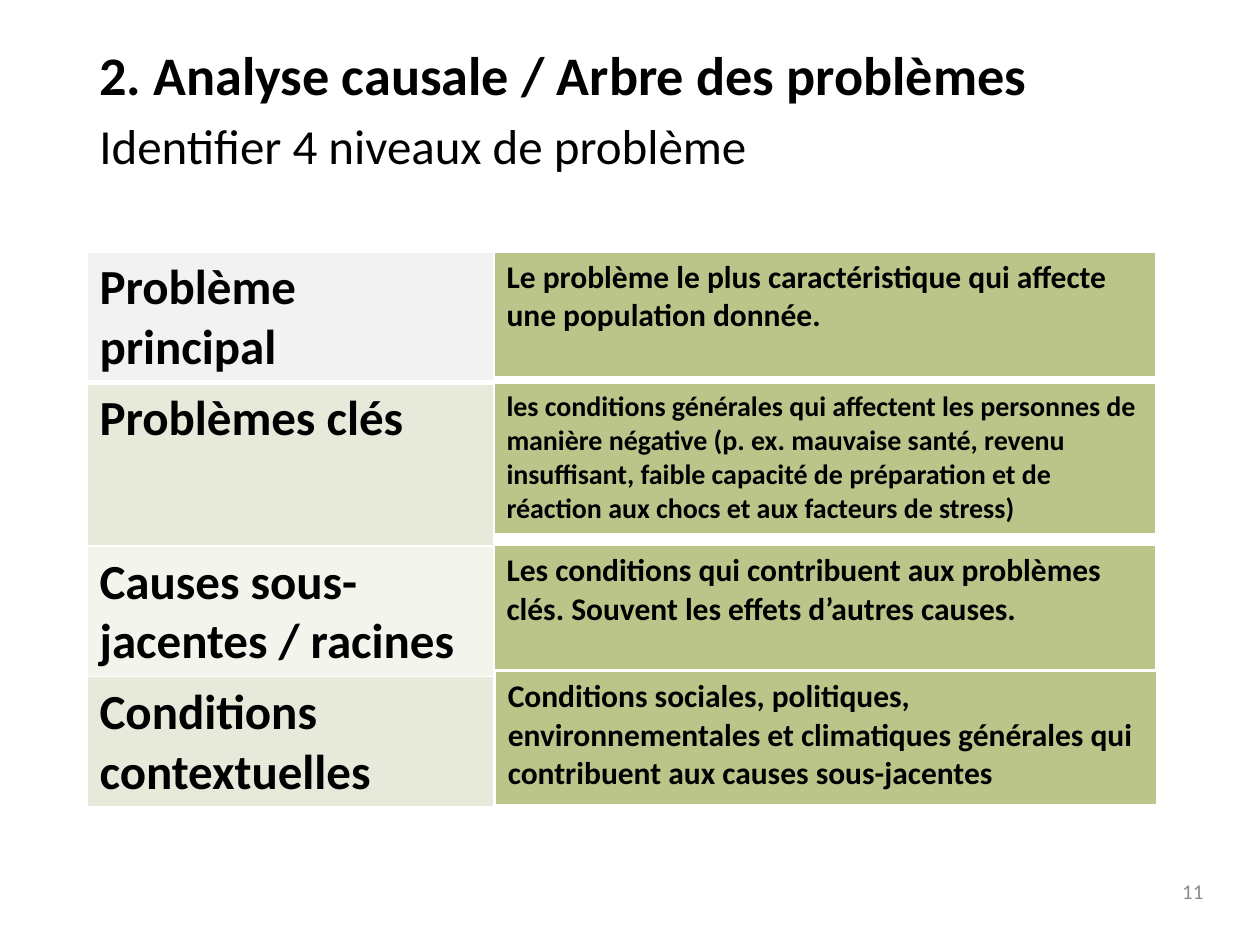
from dataclasses import dataclass

from lxml.etree import SubElement as Sub
from pptx import Presentation
from pptx.dml.color import RGBColor as Rgb
from pptx.enum.text import MSO_ANCHOR as Anchor, PP_ALIGN as Align
from pptx.oxml.ns import qn
from pptx.util import Inches, Pt

FONT = "Calibri"
COLORS = {
    "ink": "000000", "gray": "8C8C8C", "line": "FFFFFF", "green": "BCC589",
    "pale": "F2F2F2", "sage": "E7EADA", "mist": "F3F5ED",
}


@dataclass
class Row:
    text: str
    fill: str
    tall: float
    size: int
    base: int = 1  # width of the bottom border in points


@dataclass
class Grid:
    left: float
    top: float
    wide: float
    tall: float
    rows: list[Row]


@dataclass
class Label:
    text: str
    box: tuple[float, float, float, float]
    size: int
    color: str = "ink"
    bold: bool = False
    lead: float = 1.0
    anchor: Anchor = Anchor.MIDDLE
    align: Align = Align.LEFT


def style(par, size: int, color: str, bold: bool) -> None:
    font = par.font
    font.name, font.size, font.bold = FONT, Pt(size), bold
    font.color.rgb = Rgb.from_string(COLORS[color])


def add_label(slide, label: Label) -> None:
    frame = slide.shapes.add_textbox(*map(Inches, label.box)).text_frame
    frame.word_wrap = True
    frame.vertical_anchor = label.anchor
    par = frame.paragraphs[0]
    par.text = label.text
    par.alignment = label.align
    par.line_spacing = label.lead
    style(par, label.size, label.color, label.bold)


def add_edge(cell, side: str, width: int) -> None:
    props = cell._tc.get_or_add_tcPr()
    edge = Sub(props, qn(f"a:ln{side}"), w=str(Pt(width)))
    fill = Sub(edge, qn("a:solidFill"))
    Sub(fill, qn("a:srgbClr"), val=COLORS["line"])


def add_grid(slide, grid: Grid) -> None:
    box = map(Inches, (grid.left, grid.top, grid.wide, grid.tall))
    shape = slide.shapes.add_table(len(grid.rows), 1, *box)
    table = shape.table
    table.first_row = table.horz_banding = False
    for i, row in enumerate(grid.rows):
        table.rows[i].height = Inches(row.tall)
        cell = table.cell(i, 0)
        for side in "LRTB":
            add_edge(cell, side, row.base if side == "B" else 1)
        cell.fill.solid()
        cell.fill.fore_color.rgb = Rgb.from_string(COLORS[row.fill])
        cell.text = row.text
        style(cell.text_frame.paragraphs[0], row.size, "ink", True)
    shape.height = Inches(grid.tall)


def add_note(slide, left: float, top: float, tall: float, size: int,
             text: str) -> None:
    row = Row(text, "green", tall, size, 3)
    add_grid(slide, Grid(left, top, 5.25, tall, [row]))


LABELS = [
    Label("2. Analyse causale / Arbre des problèmes", (0.69, 0.35, 8.62, 0.54),
          31, bold=True, lead=0.9),
    Label("Identifier 4 niveaux de problème", (0.69, 0.96, 8.62, 0.5),
          28, lead=0.8, anchor=Anchor.TOP),
    Label("11", (8.98, 6.79, 0.67, 0.57), 12, "gray", align=Align.RIGHT),
]

LEVELS = Grid(0.69, 2, 3.23, 4.4, [
    Row("Problème principal", "pale", 0.75, 28, 3),
    Row("Problèmes clés", "sage", 1.3, 28),
    Row("Causes sous-jacentes / racines", "mist", 0.75, 28),
    Row("Conditions contextuelles", "sage", 0.75, 28),
])

# Left, top, height, text size and wording of each explanation
NOTES = [
    (3.92, 2, 1, 18, "Le problème le plus caractéristique qui affecte "
     "une population donnée."),
    (3.92, 3.04, 1.21, 16, "les conditions générales qui affectent les "
     "personnes de manière négative (p. ex. mauvaise santé, revenu "
     "insuffisant, faible capacité de préparation et de réaction aux chocs "
     "et aux facteurs de stress)"),
    (3.92, 4.33, 1, 18, "Les conditions qui contribuent aux problèmes clés. "
     "Souvent les effets d’autres causes."),
    (3.93, 5.33, 1.07, 18, "Conditions sociales, politiques, "
     "environnementales et climatiques générales qui contribuent aux causes "
     "sous-jacentes"),
]


def main() -> None:
    deck = Presentation()
    deck.slide_width, deck.slide_height = Inches(10), Inches(7.5)
    slide = deck.slides.add_slide(deck.slide_layouts[6])

    # Title, subtitle and page number
    for label in LABELS:
        add_label(slide, label)

    # Problem levels, then their explanations
    add_grid(slide, LEVELS)
    for note in NOTES:
        add_note(slide, *note)

    deck.save("out.pptx")


if __name__ == "__main__":
    main()
